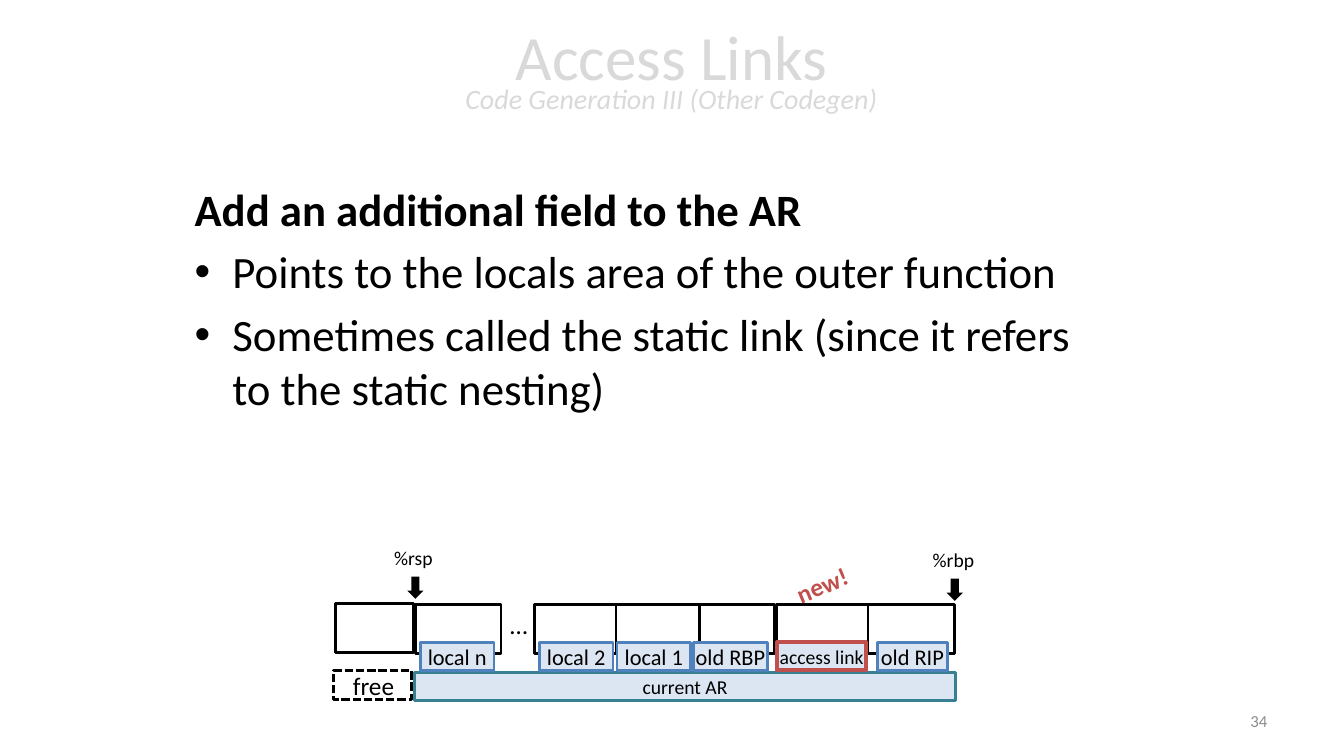
from pptx import Presentation
from pptx.dml.color import RGBColor
from pptx.enum.dml import MSO_LINE
from pptx.enum.shapes import MSO_SHAPE as SHAPE
from pptx.enum.text import MSO_ANCHOR as ANCHOR, MSO_AUTO_SIZE as AUTO, PP_ALIGN as ALIGN
from pptx.oxml.xmlchemy import OxmlElement
from pptx.util import Emu, Pt

BLACK = RGBColor(0x00, 0x00, 0x00)
WHITE = RGBColor(0xFF, 0xFF, 0xFF)
TITLE_GRAY = RGBColor(0xD9, 0xD9, 0xD9)
NUMBER_GRAY = RGBColor(0x8C, 0x8C, 0x8C)
PALE_BLUE = RGBColor(0xDC, 0xE6, 0xF2)
BLUE = RGBColor(0x4F, 0x81, 0xBD)
TEAL = RGBColor(0x37, 0x7F, 0x92)
RED = RGBColor(0xC0, 0x50, 0x4D)

PX = 9144
CELL_TOP, CELL_H = 600, 48
LABEL_TOP, LABEL_H = 637, 28


def px(n):
    return Emu(n * PX)


class Deck:
    font = "Calibri"

    def __init__(self, w, h):
        self.prs = Presentation()
        self.prs.slide_width, self.prs.slide_height = px(w), px(h)
        self.slide = self.prs.slides.add_slide(self.prs.slide_layouts[1])

    def style(self, font, size, color=BLACK, bold=False):
        font.name, font.size, font.bold = self.font, Pt(size), bold
        font.color.rgb = color

    def place(self, sp, x, y, w, h):
        sp.left, sp.top, sp.width, sp.height = map(px, (x, y, w, h))

    def inset(self, tf, l, t, r, b):
        tf.margin_left, tf.margin_top, tf.margin_right, tf.margin_bottom = map(px, (l, t, r, b))

    def title(self, box, heading, subtitle):
        sp = self.slide.shapes.title
        self.place(sp, *box)
        tf = sp.text_frame
        tf.auto_size, tf.vertical_anchor = AUTO.NONE, ANCHOR.MIDDLE
        p = tf.paragraphs[0]
        p.alignment, p.line_spacing = ALIGN.CENTER, 0.7
        r = p.add_run()
        r.text = heading
        self.style(r.font, 45, TITLE_GRAY)
        p.add_line_break()
        r = p.add_run()
        r.text = subtitle
        self.style(r.font, 20, TITLE_GRAY)
        r.font.italic = True

    def body(self, box, lead, points):
        sp = self.slide.placeholders[1]
        self.place(sp, *box)
        tf = sp.text_frame
        tf.auto_size = AUTO.NONE
        tf.text = "\n".join([lead, *points])
        for i, p in enumerate(tf.paragraphs):
            self.style(p.font, 32, bold=i == 0)
        pPr = tf.paragraphs[0]._p.get_or_add_pPr()
        pPr.set("marL", "0")
        pPr.set("indent", "0")
        pPr.insert_element_before(OxmlElement("a:buNone"), "a:tabLst", "a:defRPr", "a:extLst")

    def shape(self, box, kind=SHAPE.RECTANGLE, fill=WHITE, line=BLACK, width=2):
        sp = self.slide.shapes.add_shape(kind, *map(px, box))
        sp.shadow.inherit = False
        if fill is None:
            sp.fill.background()
        else:
            sp.fill.solid()
            sp.fill.fore_color.rgb = fill
        if line is None:
            sp.line.fill.background()
        else:
            sp.line.color.rgb, sp.line.width = line, Pt(width)
        return sp

    def label(self, box, text, size=16, inset=(0, 5, 0, 5), **look):
        sp = self.shape(box, **look)
        tf = sp.text_frame
        self.inset(tf, *inset)
        tf.vertical_anchor = ANCHOR.MIDDLE
        p = tf.paragraphs[0]
        p.text, p.alignment = text, ALIGN.CENTER
        self.style(p.font, size)
        return sp

    def text(self, box, text, size, color=BLACK, bold=False, wrap=False):
        sp = self.slide.shapes.add_textbox(*map(px, box))
        tf = sp.text_frame
        tf.word_wrap = wrap
        tf.auto_size = AUTO.NONE if wrap else AUTO.SHAPE_TO_FIT_TEXT
        p = tf.paragraphs[0]
        p.text = text
        self.style(p.font, size, color, bold)
        return sp

    def pointer(self, x, y, register, text_x, text_w):
        self.shape((x, y, 16, 22), SHAPE.DOWN_ARROW, BLACK, None)
        sp = self.text((text_x, y - 30, text_w, 24), register, 14)
        self.inset(sp.text_frame, 0, 0, 0, 0)


def main():
    deck = Deck(1333, 750)
    deck.title((235, 3, 862, 145), "Access Links", "Code Generation III (Other Codegen)")
    deck.body((183, 175, 894, 250), "Add an additional field to the AR", [
        "Points to the locals area of the outer function",
        "Sometimes called the static link (since it refers to the static nesting)",
    ])

    number = deck.text((956, 695, 311, 40), "34", 12, NUMBER_GRAY, wrap=True)
    number.text_frame.vertical_anchor = ANCHOR.MIDDLE
    number.text_frame.paragraphs[0].alignment = ALIGN.RIGHT

    deck.shape((333, CELL_TOP - 1, 77, CELL_H))
    for x, w in [(412, 85), (530, 81), (611, 88), (694, 74), (770, 91), (861, 86)]:
        deck.shape((x, CELL_TOP, w, CELL_H))

    deck.label((411, 667, 537, 28), "current AR", 14, fill=PALE_BLUE, line=TEAL)
    free = deck.label((331, 665, 77, 29), "free", 18, (2, 0, 0, 0), fill=None)
    free.line.dash_style = MSO_LINE.SQUARE_DOT
    free.text_frame.vertical_anchor = ANCHOR.TOP

    for x, w, name in [(417, 73, "local n"), (535, 73, "local 2"), (612, 73, "local 1"),
                       (688, 73, "old RBP"), (870, 70, "old RIP")]:
        deck.label((x, LABEL_TOP, w, LABEL_H), name, fill=PALE_BLUE, line=BLUE)
    deck.label((771, LABEL_TOP, 88, LABEL_H), "access link", 14, (0, 0, 0, 0),
               fill=PALE_BLUE, line=RED, width=3)

    deck.pointer(404, 572, "%rsp", 391, 40)
    deck.pointer(939, 574, "%rbp", 925, 42)
    deck.text((496, 600, 38, 40), "…", 18)
    deck.text((779, 560, 73, 40), "new!", 18, RED, True).rotation = 337.5

    deck.prs.save("out.pptx")


if __name__ == "__main__":
    main()
